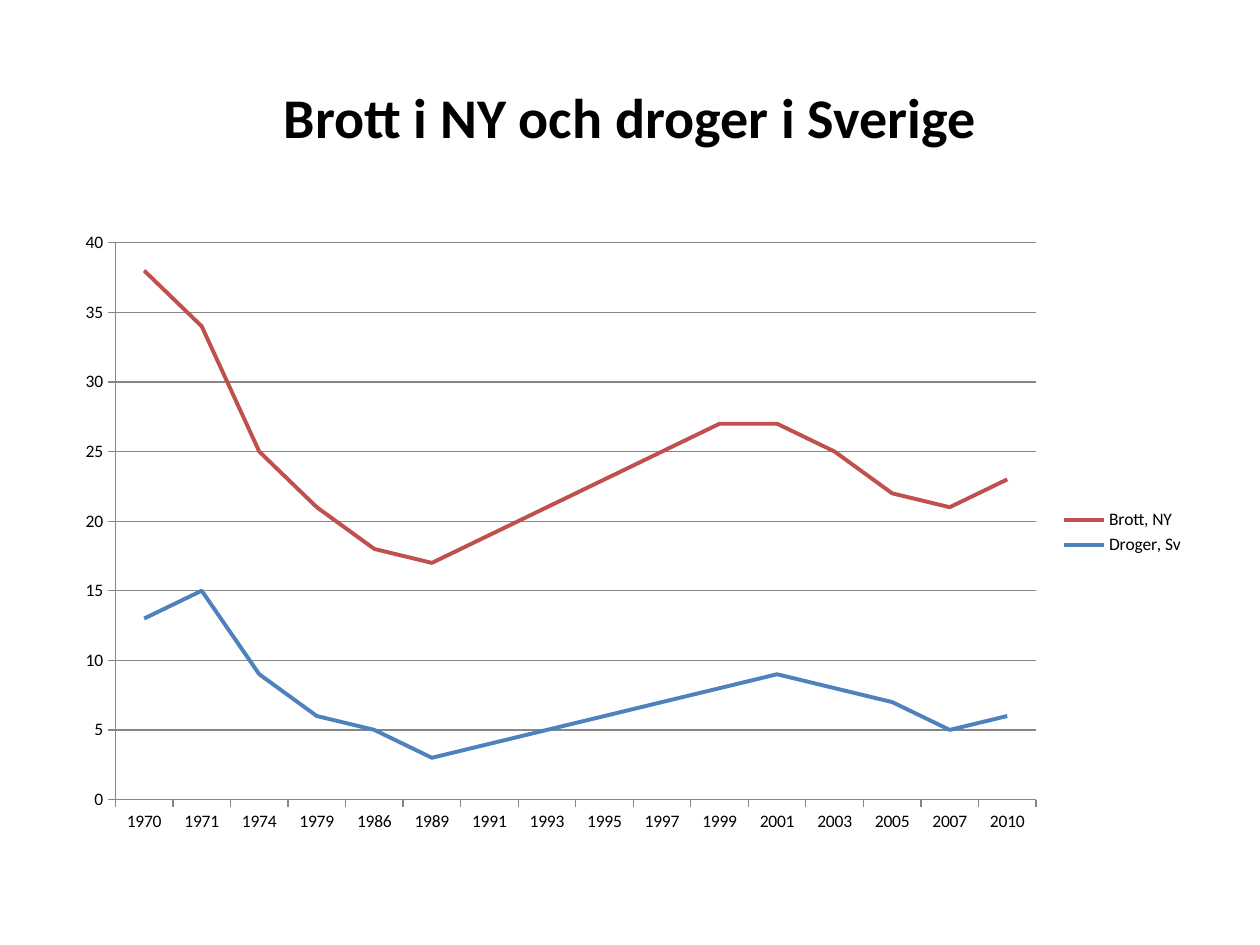
from dataclasses import dataclass

from pptx import Presentation
from pptx.chart.data import CategoryChartData
from pptx.dml.color import RGBColor
from pptx.enum.chart import XL_CHART_TYPE, XL_LEGEND_POSITION, XL_TICK_MARK
from pptx.enum.text import MSO_ANCHOR, PP_ALIGN
from pptx.util import Inches, Pt


@dataclass(frozen=True)
class Theme:
    font: str = "Calibri"
    text: RGBColor = RGBColor(0x00, 0x00, 0x00)
    axis: RGBColor = RGBColor(0x86, 0x86, 0x86)
    drugs: RGBColor = RGBColor(0x4F, 0x81, 0xBD)
    crime: RGBColor = RGBColor(0xC0, 0x50, 0x4D)
    title_size: Pt = Pt(32)
    chart_size: Pt = Pt(10)
    axis_width: Pt = Pt(0.75)
    series_width: Pt = Pt(2.25)


THEME = Theme()

YEARS = ["1970", "1971", "1974", "1979", "1986", "1989", "1991", "1993",
         "1995", "1997", "1999", "2001", "2003", "2005", "2007", "2010"]
SERIES = [
    ("Droger, Sv", THEME.drugs,
     [13, 15, 9, 6, 5, 3, 4, 5, 6, 7, 8, 9, 8, 7, 5, 6]),
    ("Brott, NY", THEME.crime,
     [25, 19, 16, 15, 13, 14, 15, 16, 17, 18, 19, 18, 17, 15, 16, 17]),
]


def format_font(font, size, bold=False):
    font.name = THEME.font
    font.size = size
    font.bold = bold
    font.color.rgb = THEME.text


def format_line(line, color, width):
    line.color.rgb = color
    line.width = width


def write_text(frame, text, size, bold=False, align=PP_ALIGN.LEFT,
               anchor=MSO_ANCHOR.TOP):
    frame.word_wrap = True
    frame.vertical_anchor = anchor
    paragraph = frame.paragraphs[0]
    paragraph.alignment = align
    run = paragraph.add_run()
    run.text = text
    format_font(run.font, size, bold)


def place_title(slide, left, top, width, height):
    title = slide.shapes.title
    title.left, title.top = left, top
    title.width, title.height = width, height
    write_text(title.text_frame, "Brott i NY och droger i Sverige",
               THEME.title_size, bold=True, align=PP_ALIGN.CENTER,
               anchor=MSO_ANCHOR.MIDDLE)


def place_trend_chart(slide, left, top, width, height):
    """Stack crime on drugs, so the upper line shows their sum."""
    trend_data = CategoryChartData()
    trend_data.categories = YEARS
    for name, _, values in SERIES:
        trend_data.add_series(name, values)
    chart = slide.shapes.add_chart(XL_CHART_TYPE.LINE_STACKED, left, top,
                                   width, height, trend_data).chart
    format_font(chart.font, THEME.chart_size)
    chart.has_title = False
    chart.has_legend = True
    chart.legend.position = XL_LEGEND_POSITION.RIGHT
    chart.legend.include_in_layout = False

    for axis in (chart.category_axis, chart.value_axis):
        axis.major_tick_mark = XL_TICK_MARK.OUTSIDE
        axis.minor_tick_mark = XL_TICK_MARK.NONE
        format_line(axis.format.line, THEME.axis, THEME.axis_width)
    years, amounts = chart.category_axis, chart.value_axis
    years.has_major_gridlines = False
    amounts.has_major_gridlines = True
    format_line(amounts.major_gridlines.format.line, THEME.axis,
                THEME.axis_width)
    amounts.minimum_scale, amounts.maximum_scale = 0, 40
    amounts.major_unit = 5

    plot = chart.plots[0]
    plot.vary_by_categories = False
    for trend, (_, color, _) in zip(plot.series, SERIES):
        trend.smooth = False
        format_line(trend.format.line, color, THEME.series_width)


def main():
    prs = Presentation()
    prs.slide_width, prs.slide_height = Inches(10), Inches(7.5)
    title_only = prs.slide_layouts[5]
    slide = prs.slides.add_slide(title_only)
    margin, content_width = Inches(0.5), Inches(9)
    place_title(slide, margin, Inches(0.3), content_width, Inches(1.25))
    place_trend_chart(slide, margin, Inches(1.75), content_width,
                      Inches(4.95))
    prs.save("out.pptx")


if __name__ == "__main__":
    main()
